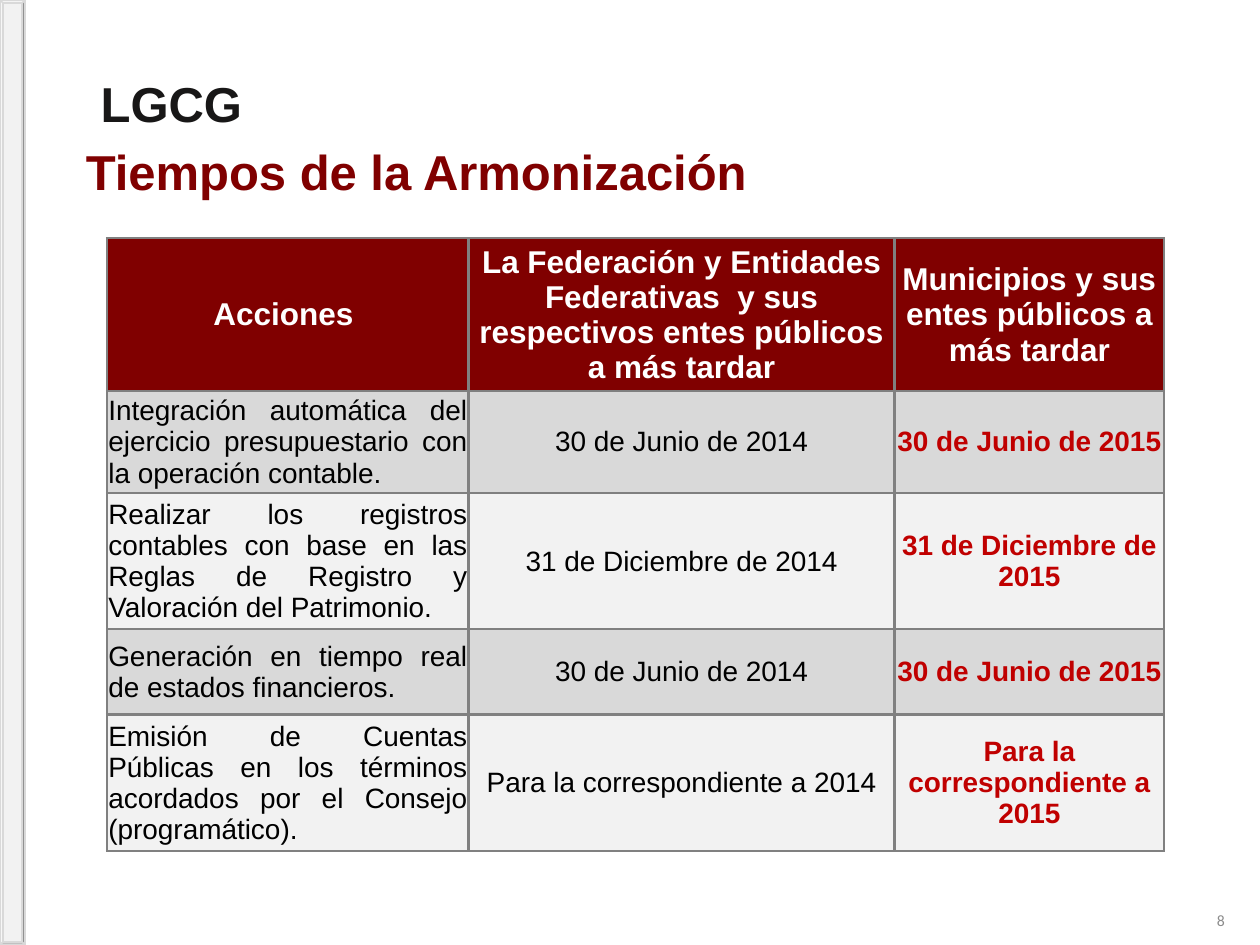
from pptx import Presentation
from pptx.dml.color import RGBColor
from pptx.enum.shapes import MSO_SHAPE
from pptx.enum.text import MSO_ANCHOR, PP_ALIGN
from pptx.oxml import parse_xml
from pptx.oxml.ns import nsdecls
from pptx.util import Pt

MAROON = RGBColor(0x80, 0x00, 0x00)
RED = RGBColor(0xC0, 0x00, 0x00)
INK = RGBColor(0x18, 0x17, 0x17)
BLACK = RGBColor(0x00, 0x00, 0x00)
WHITE = RGBColor(0xFF, 0xFF, 0xFF)
GRAY = RGBColor(0x80, 0x80, 0x80)
NUMBER_GRAY = RGBColor(0x8C, 0x8C, 0x8C)
BAND_DARK = RGBColor(0xD9, 0xD9, 0xD9)
BAND_LIGHT = RGBColor(0xF2, 0xF2, 0xF2)

COL_WIDTHS = (206.6, 243.4, 154.1)
ROW_HEIGHTS = (87.1, 58.3, 77.8, 49, 77.8)
ROWS = (
    ("Acciones ",
     "La Federación y Entidades Federativas  y sus respectivos entes públicos a más tardar",
     "Municipios y sus entes públicos a más tardar"),
    ("Integración automática del ejercicio presupuestario con la operación contable.",
     "30 de Junio de 2014", "30 de Junio de 2015"),
    ("Realizar los registros contables con base en las Reglas de Registro y Valoración del Patrimonio.",
     "31 de Diciembre de 2014", "31 de Diciembre de 2015"),
    ("Generación en tiempo real de estados financieros.",
     "30 de Junio de 2014", "30 de Junio de 2015"),
    ("Emisión de Cuentas Públicas en los términos acordados por el Consejo (programático).",
     "Para la correspondiente a 2014", "Para la correspondiente a 2015"),
)


def set_text(tf, text, size, color, bold=False, align=PP_ALIGN.CENTER, font="Arial"):
    tf.text = text
    p = tf.paragraphs[0]
    p.alignment = align
    p.font.name = font
    p.font.size = Pt(size)
    p.font.bold = bold
    p.font.color.rgb = color


def add_side_bar(slide, left, top, width, height):
    sp = slide.shapes.add_shape(MSO_SHAPE.BEVEL, Pt(left), Pt(top), Pt(width), Pt(height))
    sp.shadow.inherit = False
    sp.fill.solid()
    sp.fill.fore_color.rgb = BAND_LIGHT
    sp.line.color.rgb = BAND_DARK
    sp.line.width = Pt(1)


def add_label(slide, left, top, width, height, text, size, color, **style):
    sp = slide.shapes.add_textbox(Pt(left), Pt(top), Pt(width), Pt(height))
    tf = sp.text_frame
    tf.vertical_anchor = MSO_ANCHOR.MIDDLE
    set_text(tf, text, size, color, **style)
    return sp


def place_title(slide, left, top, width, height):
    sp = slide.shapes.title
    sp.left, sp.top, sp.width, sp.height = Pt(left), Pt(top), Pt(width), Pt(height)
    tf = sp.text_frame
    tf.word_wrap = False
    tf.vertical_anchor = MSO_ANCHOR.MIDDLE
    set_text(tf, "Tiempos de la Armonización", 28, MAROON, bold=True)


def add_borders(cell):
    tcPr = cell._tc.get_or_add_tcPr()
    for i, side in enumerate(("lnL", "lnR", "lnT", "lnB")):
        tcPr.insert(i, parse_xml(
            f'<a:{side} {nsdecls("a")} w="{Pt(1.5)}"><a:solidFill>'
            f'<a:srgbClr val="{GRAY}"/></a:solidFill></a:{side}>'))


def cell_style(row, col):
    if row == 0:
        return MAROON, 18, WHITE, True, PP_ALIGN.CENTER
    band = BAND_DARK if row % 2 else BAND_LIGHT
    last = col == len(COL_WIDTHS) - 1
    align = PP_ALIGN.JUSTIFY if col == 0 else PP_ALIGN.CENTER
    return band, 16, RED if last else BLACK, last, align


def add_deadlines(slide, left, top):
    table = slide.shapes.add_table(
        len(ROWS), len(COL_WIDTHS), Pt(left), Pt(top),
        Pt(sum(COL_WIDTHS)), Pt(sum(ROW_HEIGHTS))).table
    for column, width in zip(table.columns, COL_WIDTHS):
        column.width = Pt(width)
    for r, (height, texts) in enumerate(zip(ROW_HEIGHTS, ROWS)):
        table.rows[r].height = Pt(height)
        for c, text in enumerate(texts):
            fill, size, color, bold, align = cell_style(r, c)
            cell = table.cell(r, c)
            cell.margin_left = cell.margin_right = cell.margin_top = Pt(0.72)
            cell.margin_bottom = 0
            cell.vertical_anchor = MSO_ANCHOR.MIDDLE
            cell.fill.solid()
            cell.fill.fore_color.rgb = fill
            set_text(cell.text_frame, text, size, color, bold, align)
            add_borders(cell)


def main():
    prs = Presentation()
    prs.slide_width, prs.slide_height = Pt(720), Pt(540)
    slide = prs.slides.add_slide(prs.slide_layouts[5])
    add_side_bar(slide, 0, 0, 14.4, 540)
    add_label(slide, 42.5, 38.2, 110.9, 41, "LGCG", 28, INK, bold=True)
    place_title(slide, 33.8, 77, 408.2, 41)
    add_deadlines(slide, 61.2, 136.1)
    add_label(slide, 681.8, 511.2, 25.2, 28.8, "8", 9, NUMBER_GRAY,
              align=PP_ALIGN.RIGHT, font="Calibri").text_frame.word_wrap = True
    prs.save("out.pptx")


if __name__ == "__main__":
    main()
